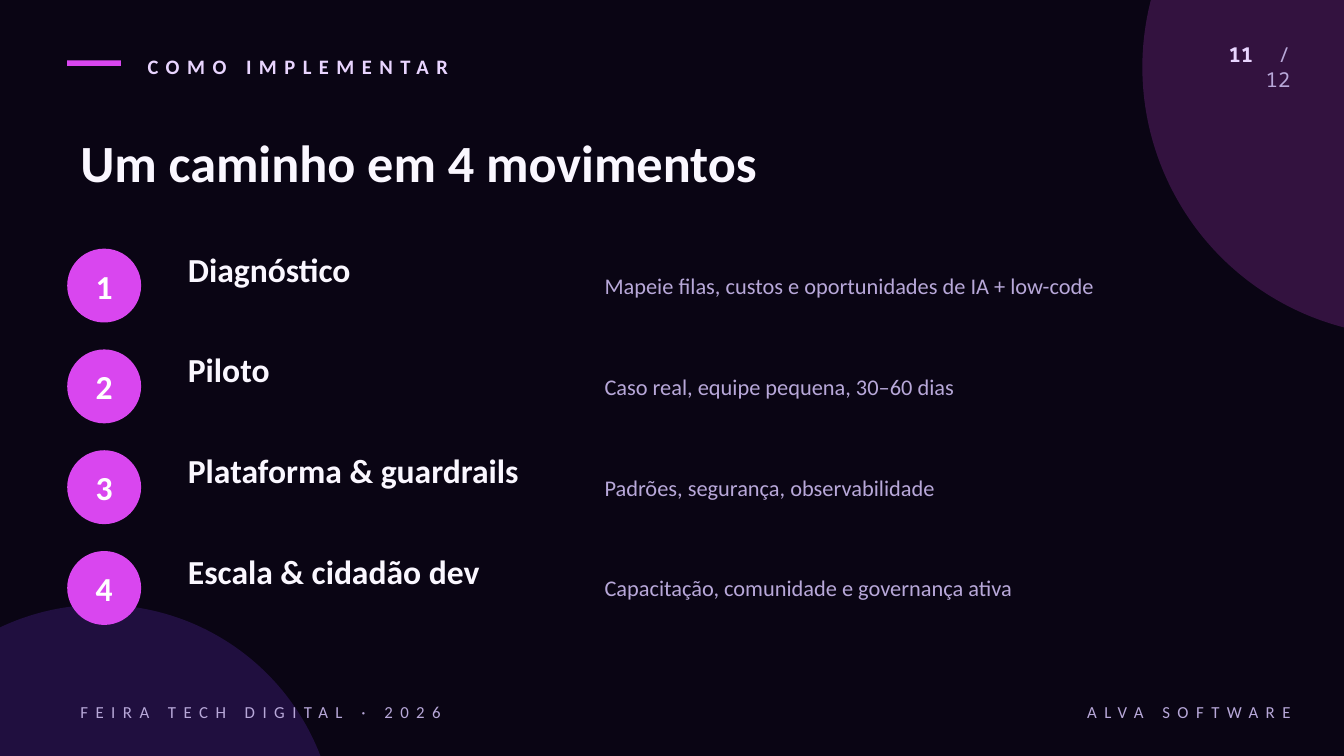
from lxml import etree
from pptx import Presentation, util as u
from pptx.dml.color import RGBColor
from pptx.enum import shapes, text
from pptx.oxml.ns import qn

PINK, VIOLET, LILAC, MUTED, PALE = "D946EF", "7C3AED", "E9D5FF", "B8A8D9", "FAF7FF"
LEFT, CENTER, RIGHT = text.PP_ALIGN.LEFT, text.PP_ALIGN.CENTER, text.PP_ALIGN.RIGHT
OVAL, RECT = shapes.MSO_SHAPE.OVAL, shapes.MSO_SHAPE.RECTANGLE

deck = Presentation()
deck.slide_width = u.Inches(10)
deck.slide_height = deck.slide_width * 9 // 16
slide = deck.slides.add_slide(deck.slide_layouts[6])
back = slide.background.fill
back.solid()
back.fore_color.rgb = RGBColor.from_string("0A0514")


def draw(kind, box, color, alpha=None):
    """Add a borderless shape; alpha is its opacity in percent."""
    item = slide.shapes.add_shape(kind, *map(u.Inches, box))
    item.shadow.inherit = False
    item.line.fill.background()
    item.fill.solid()
    item.fill.fore_color.rgb = RGBColor.from_string(color)
    if alpha:
        tone = item.fill._xPr.find(".//" + qn("a:srgbClr"))
        etree.SubElement(tone, qn("a:alpha"), val=str(alpha * 1000))


def write(box, parts, size, align=LEFT, font="Calibri"):
    """Add a text box; parts holds (words, color, bold[, letter spacing]) per run."""
    frame = slide.shapes.add_textbox(*map(u.Inches, box)).text_frame
    frame.word_wrap = True
    frame.vertical_anchor = text.MSO_ANCHOR.MIDDLE
    para = frame.paragraphs[0]
    para.alignment = align
    for words, color, bold, *space in parts:
        run = para.add_run()
        run.text = words
        run.font.name, run.font.size, run.font.bold = font, u.Pt(size), bold
        run.font.color.rgb = RGBColor.from_string(color)
        if space:
            run.font._element.set("spc", str(round(space[0] * 100)))


# Backdrop and header
draw(OVAL, (8.5, -1.5, 4, 4), PINK, 20)
draw(OVAL, (-1, 4.5, 3.5, 3.5), VIOLET, 20)
draw(RECT, (0.5, 0.45, 0.4, 0.04), PINK)
write((1, 0.32, 6, 0.35), [("COMO IMPLEMENTAR", LILAC, True, 4)], 11)
gap = (" ", MUTED, False, 6.6)
page = [("11", LILAC, True), gap, ("/", MUTED, False), gap, ("12", MUTED, False)]
write((8.7, 0.32, 1, 0.35), page, 11, RIGHT, "Noto Sans Mono")
write((0.5, 0.9, 9, 0.6), [("Um caminho em 4 movimentos", PALE, True)], 28)

# Numbered steps
steps = [
    ("Diagnóstico", "Mapeie filas, custos e oportunidades de IA + low-code"),
    ("Piloto", "Caso real, equipe pequena, 30–60 dias"),
    ("Plataforma & guardrails", "Padrões, segurança, observabilidade"),
    ("Escala & cidadão dev", "Capacitação, comunidade e governança ativa"),
]
DOT, PITCH = 0.55, 0.75
for row, (name, note) in enumerate(steps):
    top = 1.85 + row * PITCH
    draw(OVAL, (0.5, top, DOT, DOT), PINK)
    write((0.5, top, DOT, DOT), [(str(row + 1), "FFFFFF", True)], 18, CENTER)
    write((1.3, top - 0.05, 3, 0.4), [(name, PALE, True)], 18)
    write((4.4, top, 5.2, DOT), [(note, MUTED, False)], 12)

# Footer
write((0.5, 5.15, 4, 0.3), [("FEIRA TECH DIGITAL · 2026", MUTED, False, 4)], 9)
write((5.5, 5.15, 4.2, 0.3), [("ALVA SOFTWARE", MUTED, False, 4)], 9, RIGHT)

deck.save("out.pptx")
